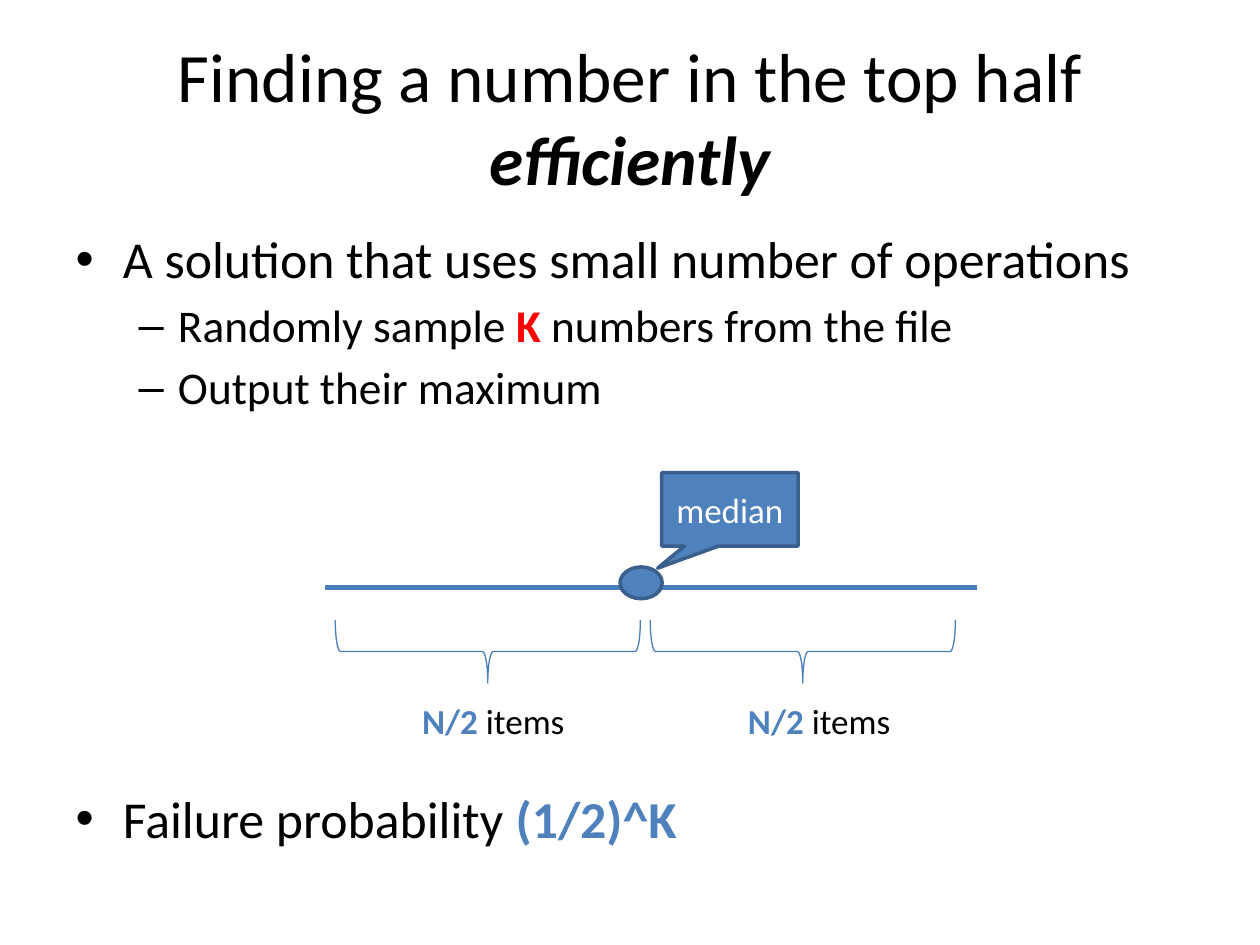
from pptx import Presentation
from pptx.dml.color import RGBColor as Rgb
from pptx.enum.shapes import MSO_CONNECTOR as Link, MSO_SHAPE as Form
from pptx.enum.text import MSO_ANCHOR as Anchor, MSO_AUTO_SIZE as Fit, PP_ALIGN as Align
from pptx.oxml.xmlchemy import OxmlElement as Node
from pptx.util import Cm, Pt

HUES = {"ink": "000000", "blue": "4F81BD", "edge": "3A5F8C",
        "line": "4B7EBC", "red": "FF0000", "white": "FFFFFF"}


class Deck:
    """Holds the style and the current slide, and draws each kind of element."""

    def __init__(self, wide, high):
        self.show = Presentation()
        self.show.slide_width, self.show.slide_height = Cm(wide), Cm(high)
        self.slide = self.show.slides.add_slide(self.show.slide_layouts[1])
        self.face = "Calibri"

    def hue(self, name):
        return Rgb.from_string(HUES[name])

    def place(self, item, box):
        item.left, item.top, item.width, item.height = map(Cm, box)

    def words(self, para, parts, size, tone="ink"):
        font = para.font
        font.name, font.size = self.face, Pt(size)
        font.color.rgb = self.hue(tone)
        for text, *style in parts:
            run = para.add_run()
            run.text = text
            if style:
                run.font.bold = True
                if style[0] == "italic":
                    run.font.italic = True
                else:
                    run.font.color.rgb = self.hue(style[0])

    def title(self, box, parts, size):
        item = self.slide.shapes.title
        self.place(item, box)
        frame = item.text_frame
        frame.auto_size, frame.vertical_anchor = Fit.NONE, Anchor.MIDDLE
        self.words(frame.paragraphs[0], parts, size)

    def body(self, box, rows):
        item = self.slide.placeholders[1]
        self.place(item, box)
        frame = item.text_frame
        frame.auto_size = Fit.NONE
        for spot, (level, size, gap, parts) in enumerate(rows):
            para = frame.add_paragraph() if spot else frame.paragraphs[0]
            para.level, para.space_before = level, Pt(gap)
            self.words(para, parts, size)

    def line(self, start, end, width):
        item = self.slide.shapes.add_connector(
            Link.STRAIGHT, *map(Cm, (*start, *end)))
        item.line.color.rgb, item.line.width = self.hue("line"), Pt(width)
        item._element.spPr.append(Node("a:effectLst"))

    def shape(self, form, box, width=2, edge="edge", fill="blue"):
        item = self.slide.shapes.add_shape(form, *map(Cm, box))
        item.shadow.inherit = False
        item.line.color.rgb, item.line.width = self.hue(edge), Pt(width)
        if fill:
            item.fill.solid()
            item.fill.fore_color.rgb = self.hue(fill)
        else:
            item.fill.background()
        return item

    def brace(self, box):
        self.shape(Form.LEFT_BRACE, box, 0.75, "line", None).rotation = 270

    def callout(self, box, tip, text):
        item = self.shape(Form.RECTANGULAR_CALLOUT, box)
        item.adjustments[0], item.adjustments[1] = tip
        frame = item.text_frame
        frame.vertical_anchor, frame.word_wrap = Anchor.MIDDLE, True
        para = frame.paragraphs[0]
        para.alignment = Align.CENTER
        self.words(para, [(text,)], 20, "white")

    def label(self, box, parts):
        frame = self.slide.shapes.add_textbox(*map(Cm, box)).text_frame
        frame.word_wrap, frame.auto_size = True, Fit.SHAPE_TO_FIT_TEXT
        para = frame.paragraphs[0]
        para.alignment = Align.CENTER
        self.words(para, parts, 20)


def main():
    deck = Deck(25.4, 19.05)
    deck.title((1.27, 0.76, 22.86, 3.18),
               [("Finding a number in the top half ",), ("efficiently", "italic")], 39.6)
    deck.body((1.27, 4.45, 22.86, 12.57), [
        (0, 29.6, 0, [("A solution that uses small number of operations",)]),
        (1, 25.9, 4.5, [("Randomly sample ",), ("K ", "red"), ("numbers from the file",)]),
        (1, 25.9, 4.5, [("Output their maximum",)]),
        (0, 29.6, 213, [("Failure probability ",), ("(1/2)^K", "blue")]),
    ])
    deck.line((6.56, 11.85), (19.69, 11.85), 3)
    deck.shape(Form.OVAL, (12.5, 11.43, 0.85, 0.64))
    for left in (9.2, 15.55):
        deck.brace((left, 10.06, 1.27, 6.15))
    deck.callout((13.34, 9.53, 2.75, 1.48), (-0.53, 0.8), "median")
    for left in (7.83, 14.4):
        deck.label((left, 13.98, 4.23, 1.11), [("N/2", "blue"), (" items",)])
    deck.show.save("out.pptx")


if __name__ == "__main__":
    main()
